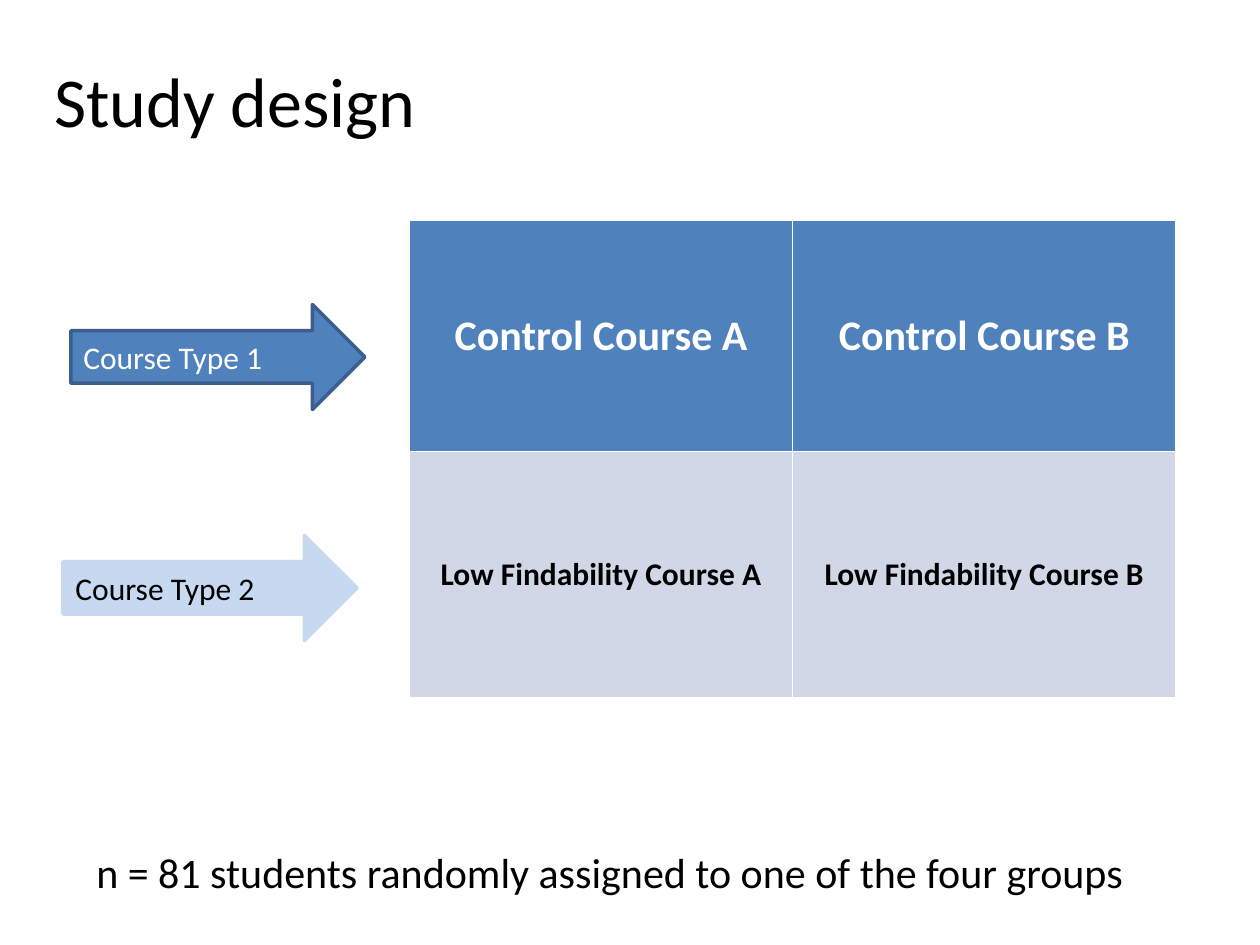
from pptx import Presentation
from pptx.dml.color import RGBColor
from pptx.enum.shapes import MSO_SHAPE
from pptx.enum.text import MSO_ANCHOR, PP_ALIGN
from pptx.util import Inches, Pt

ARROW = MSO_SHAPE.RIGHT_ARROW
TOP, MIDDLE = MSO_ANCHOR.TOP, MSO_ANCHOR.MIDDLE
LEFT, CENTER = PP_ALIGN.LEFT, PP_ALIGN.CENTER
BLANK_LAYOUT = 6
COLORS = {
    "black": "000000",
    "white": "FFFFFF",
    "blue": "4F81BD",
    "dark_blue": "3A5F8C",
    "light_blue": "C6D9F1",
    "pale_blue": "D0D8E8",
}


def color(name):
    return RGBColor.from_string(COLORS[name])


class SlideBuilder:
    """Places styled elements on a slide with a grid of 120 columns and 90 rows."""

    font_name = "Calibri"
    columns, rows = 120, 90

    def __init__(self, presentation):
        self.cell_width = presentation.slide_width / self.columns
        self.cell_height = presentation.slide_height / self.rows
        self.slide = presentation.slides.add_slide(presentation.slide_layouts[BLANK_LAYOUT])

    def box(self, column, row, width, height):
        return (
            round(column * self.cell_width),
            round(row * self.cell_height),
            round(width * self.cell_width),
            round(height * self.cell_height),
        )

    def fill_text(self, frame, text, size, color_name, alignment=LEFT, bold=False):
        paragraph = frame.paragraphs[0]
        paragraph.text = text
        paragraph.alignment = alignment
        formats = {"name": self.font_name, "size": Pt(size), "bold": bold}
        for attribute, value in formats.items():
            setattr(paragraph.runs[0].font, attribute, value)
        paragraph.runs[0].font.color.rgb = color(color_name)

    def text(self, place, text, size, anchor=TOP):
        frame = self.slide.shapes.add_textbox(*self.box(*place)).text_frame
        frame.word_wrap = True
        frame.vertical_anchor = anchor
        self.fill_text(frame, text, size, "black")

    def arrow(self, place, text, fill, line, text_color):
        shape = self.slide.shapes.add_shape(ARROW, *self.box(*place))
        shape.shadow.inherit = False
        shape.fill.solid()
        shape.fill.fore_color.rgb = color(fill)
        shape.line.color.rgb = color(line)
        shape.line.width = Pt(2)
        shape.text_frame.vertical_anchor = MIDDLE
        self.fill_text(shape.text_frame, text, 18, text_color)

    def table(self, place, groups, row_heights, row_styles):
        frame = self.slide.shapes.add_table(len(groups), len(groups[0]), *self.box(*place))
        table = frame.table
        for row, height in enumerate(row_heights):
            table.rows[row].height = round(height * self.cell_height)
            fill, size, text_color = row_styles[row]
            for column, text in enumerate(groups[row]):
                cell = table.cell(row, column)
                cell.fill.solid()
                cell.fill.fore_color.rgb = color(fill)
                cell.vertical_anchor = MIDDLE
                self.fill_text(cell.text_frame, text, size, text_color, CENTER, True)


def main():
    presentation = Presentation()
    presentation.slide_width, presentation.slide_height = Inches(10), Inches(7.5)
    builder = SlideBuilder(presentation)
    builder.text((4, 2, 39, 15), "Study design", 40, MIDDLE)
    groups = [
        [f"{kind} Course {version}" for version in "AB"]
        for kind in ("Control", "Low Findability")
    ]
    row_styles = [("blue", 24, "white"), ("pale_blue", 18, "black")]
    builder.table((39, 21, 73, 45.5), groups, (22, 23.5), row_styles)
    builder.arrow((6.75, 29, 28, 10), "Course Type 1", "blue", "dark_blue", "white")
    builder.arrow((6, 51, 28, 10), "Course Type 2", "light_blue", "light_blue", "black")
    builder.text(
        (8, 80, 101, 6), "n = 81 students randomly assigned to one of the four groups", 24
    )
    presentation.save("out.pptx")


if __name__ == "__main__":
    main()
